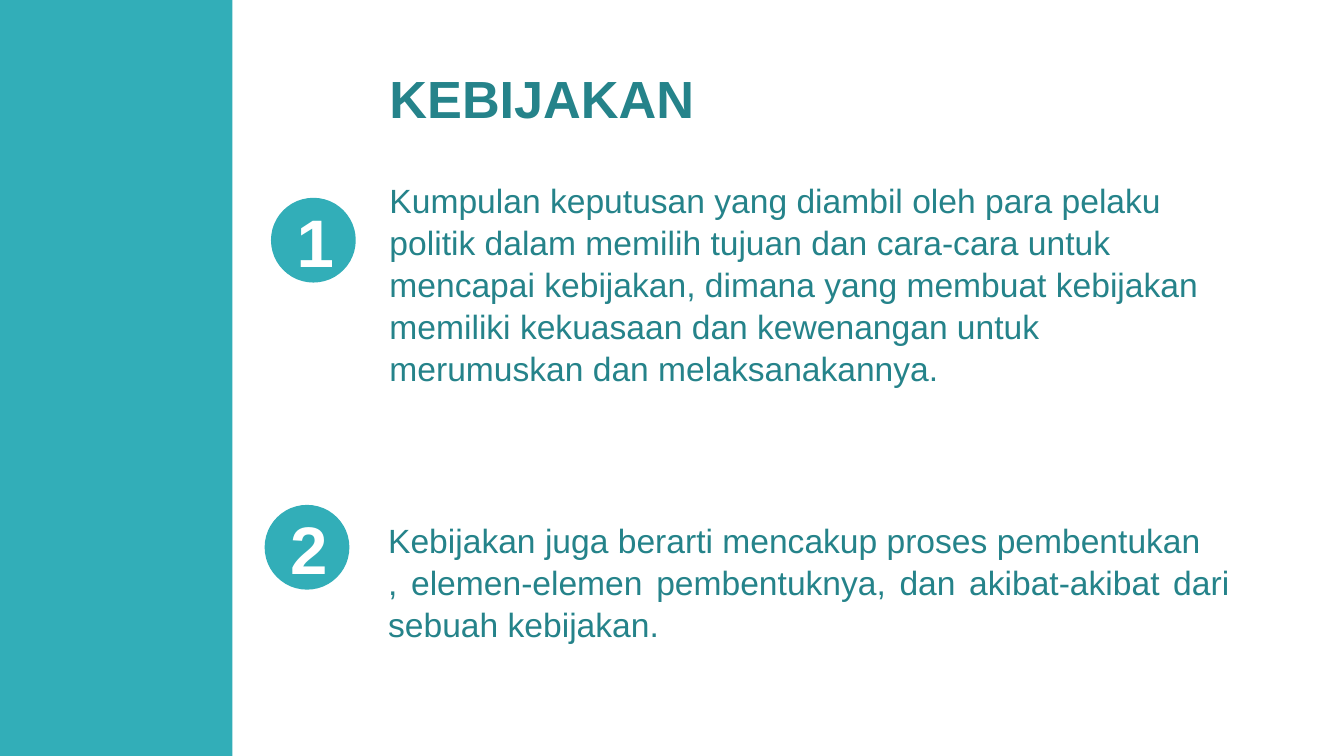
from pptx import Presentation
from pptx.dml.color import RGBColor
from pptx.enum.shapes import MSO_SHAPE as Kind
from pptx.enum.text import MSO_ANCHOR as Anchor, PP_ALIGN as Align
from pptx.util import Pt

TEAL, DARK, WHITE = "32AEB8", "25838A", "FFFFFF"


def color(code):
    return RGBColor.from_string(code)


def add_box(kind, box, fill, lines=(), size=18, ink=DARK, bold=False,
            align=Align.LEFT, anchor=Anchor.TOP, pitch=1.0):
    """Add a filled shape with one paragraph per line; no fill if None."""
    shape = slide.shapes.add_shape(kind, *map(Pt, box))
    shape.shadow.inherit = False
    shape.line.fill.background()
    if fill:
        shape.fill.solid()
        shape.fill.fore_color.rgb = color(fill)
    else:
        shape.fill.background()
    frame = shape.text_frame
    frame.word_wrap = True
    frame.vertical_anchor = anchor
    for i, line in enumerate(lines):
        para = frame.add_paragraph() if i else frame.paragraphs[0]
        para.alignment = align
        para.line_spacing = pitch
        run = para.add_run()
        run.text = line
        font = run.font
        font.name, font.size, font.bold = "Arial", Pt(size), bold
        font.color.rgb = color(ink)
    return frame


deck = Presentation()
deck.slide_width, deck.slide_height = Pt(720), Pt(405)
slide = deck.slides.add_slide(deck.slide_layouts[6])

# Side band
add_box(Kind.RECTANGLE, (0, 0, 124.5, 405), TEAL)

# Numbered points: text box, then its badge
points = [
    ((201.6, 92.2, 465, 142), (145.2, 106), Align.LEFT,
     ["Kumpulan keputusan yang diambil oleh para pelaku",
      "politik dalam memilih tujuan dan cara-cara untuk mencapai kebijakan, "
      "dimana yang membuat kebijakan memiliki kekuasaan dan kewenangan untuk "
      "merumuskan dan melaksanakannya."]),
    ((200.9, 274.3, 465, 85), (141.8, 270.5), Align.JUSTIFY,
     ["Kebijakan juga berarti mencakup proses pembentukan ",
      ", elemen-elemen pembentuknya, dan akibat-akibat dari "
      "sebuah kebijakan. "]),
]
for num, (box, spot, align, lines) in enumerate(points, 1):
    add_box(Kind.RECTANGLE, box, WHITE, lines, align=align, pitch=1.04)
    add_box(Kind.OVAL, (*spot, 45.4, 45.4), TEAL, [str(num)], 36, WHITE,
            True, Align.CENTER, Anchor.MIDDLE)

# Title
add_box(Kind.RECTANGLE, (201.6, 29.5, 335, 45.4), None, ["KEBIJAKAN"], 28,
        bold=True, anchor=Anchor.MIDDLE)

deck.save("out.pptx")
